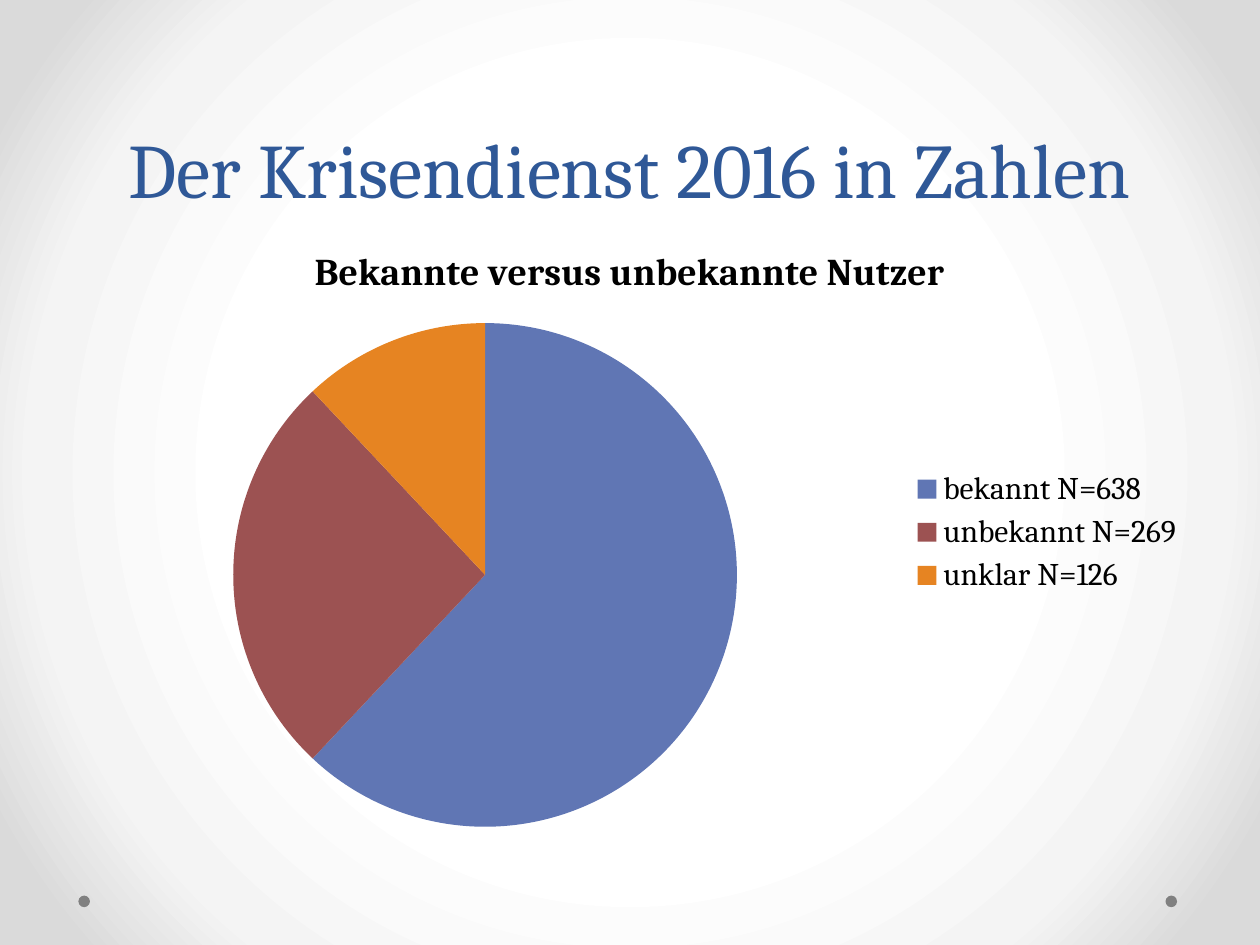
"""Build the crisis service slide with its pie chart of known and unknown users."""
from lxml import etree
from pptx import Presentation
from pptx.chart.data import CategoryChartData
from pptx.dml.color import RGBColor
from pptx.enum.chart import XL_CHART_TYPE, XL_LEGEND_POSITION
from pptx.enum.shapes import MSO_SHAPE
from pptx.enum.text import MSO_ANCHOR, PP_ALIGN
from pptx.oxml.ns import qn
from pptx.util import Pt

PIE = XL_CHART_TYPE.PIE
LEGEND_RIGHT = XL_LEGEND_POSITION.RIGHT
OVAL = MSO_SHAPE.OVAL
BOTTOM = MSO_ANCHOR.BOTTOM
CENTER = PP_ALIGN.CENTER

BLACK = RGBColor(0x00, 0x00, 0x00)
GRAY = RGBColor(0x80, 0x80, 0x80)
NAVY = RGBColor(0x2F, 0x58, 0x97)
BLUE = RGBColor(0x60, 0x76, 0xB4)
RED = RGBColor(0x9C, 0x52, 0x52)
ORANGE = RGBColor(0xE6, 0x84, 0x22)
WHITE = RGBColor(0xFF, 0xFF, 0xFF)
PALE = RGBColor(0xF4, 0xF4, 0xF4)
SILVER = RGBColor(0xDA, 0xDA, 0xDA)

FONT = "Cambria"
TITLE_FORMAT = {"name": FONT, "size": Pt(44), "bold": False}
CHART_FORMAT = {"name": FONT, "size": Pt(18), "bold": False}
HEADING_FORMAT = {"name": FONT, "size": Pt(21.6), "bold": True}

BACKGROUND_STOPS = [(50, WHITE), (76, PALE), (92, SILVER)]
HEADING = "Bekannte versus unbekannte Nutzer"
USERS = [
    ("bekannt N=638", 62, BLUE),
    ("unbekannt N=269", 26, RED),
    ("unklar N=126", 12, ORANGE),
]


class SlideBuilder:
    """Hold the current slide and add styled elements to it."""

    def __init__(self, presentation):
        self.slide = presentation.slides.add_slide(presentation.slide_layouts[5])

    def style(self, font, values, color):
        for name, value in values.items():
            setattr(font, name, value)
        font.color.rgb = color

    def background(self, stops):
        fill = self.slide.background.fill
        fill.gradient()
        gradient = self.slide.background._cSld.find(".//" + qn("a:gradFill"))
        for child in list(gradient):
            gradient.remove(child)
        stop_list = etree.SubElement(gradient, qn("a:gsLst"))
        for position, color in stops:
            stop = etree.SubElement(stop_list, qn("a:gs"), pos=str(position * 1000))
            etree.SubElement(stop, qn("a:srgbClr"), val=str(color))
        circle = etree.SubElement(gradient, qn("a:path"), path="circle")
        center = dict.fromkeys("ltrb", "50000")
        etree.SubElement(circle, qn("a:fillToRect"), center)

    def dot(self, left, top, size):
        shape = self.slide.shapes.add_shape(OVAL, Pt(left), Pt(top), Pt(size), Pt(size))
        shape.shadow.inherit = False
        shape.fill.solid()
        shape.fill.fore_color.rgb = GRAY
        shape.line.fill.background()

    def title(self, text, left, top, width, height):
        shape = self.slide.shapes.title
        shape.left, shape.top = Pt(left), Pt(top)
        shape.width, shape.height = Pt(width), Pt(height)
        frame = shape.text_frame
        frame.text = text
        frame.vertical_anchor = BOTTOM
        paragraph = frame.paragraphs[0]
        paragraph.alignment = CENTER
        paragraph.line_spacing = Pt(58)
        self.style(paragraph.runs[0].font, TITLE_FORMAT, NAVY)

    def pie(self, heading, rows, left, top, width, height):
        names, values, colors = zip(*rows)
        data = CategoryChartData()
        data.categories = names
        data.add_series(heading, values)
        chart = self.slide.shapes.add_chart(
            PIE, Pt(left), Pt(top), Pt(width), Pt(height), data
        ).chart
        self.style(chart.font, CHART_FORMAT, BLACK)
        chart.has_title = True
        chart.chart_title.include_in_layout = False
        frame = chart.chart_title.text_frame
        frame.text = heading
        self.style(frame.paragraphs[0].runs[0].font, HEADING_FORMAT, BLACK)
        chart.has_legend = True
        chart.legend.position = LEGEND_RIGHT
        chart.legend.include_in_layout = False
        plot = chart.plots[0]
        plot.vary_by_categories = True
        for index, color in enumerate(colors):
            fill = plot.series[0].points[index].format.fill
            fill.solid()
            fill.fore_color.rgb = color


def main():
    presentation = Presentation()
    presentation.slide_width, presentation.slide_height = Pt(720), Pt(540)
    builder = SlideBuilder(presentation)
    builder.background(BACKGROUND_STOPS)
    for left in (666, 44.8):
        builder.dot(left, 511.8, 6.6)
    builder.title("Der Krisendienst 2016 in Zahlen", 36, 0, 648, 126)
    builder.pie(HEADING, USERS, 36, 126, 648, 356.4)
    presentation.save("out.pptx")


if __name__ == "__main__":
    main()
